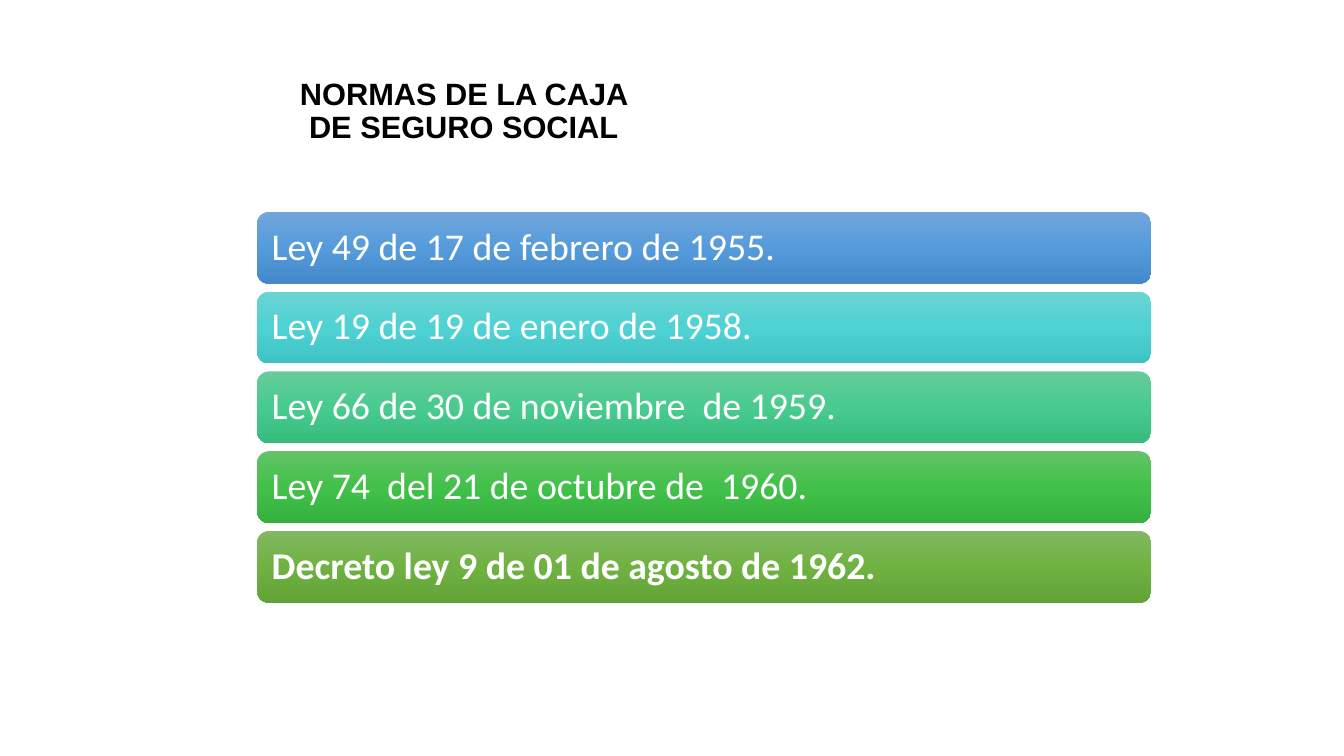
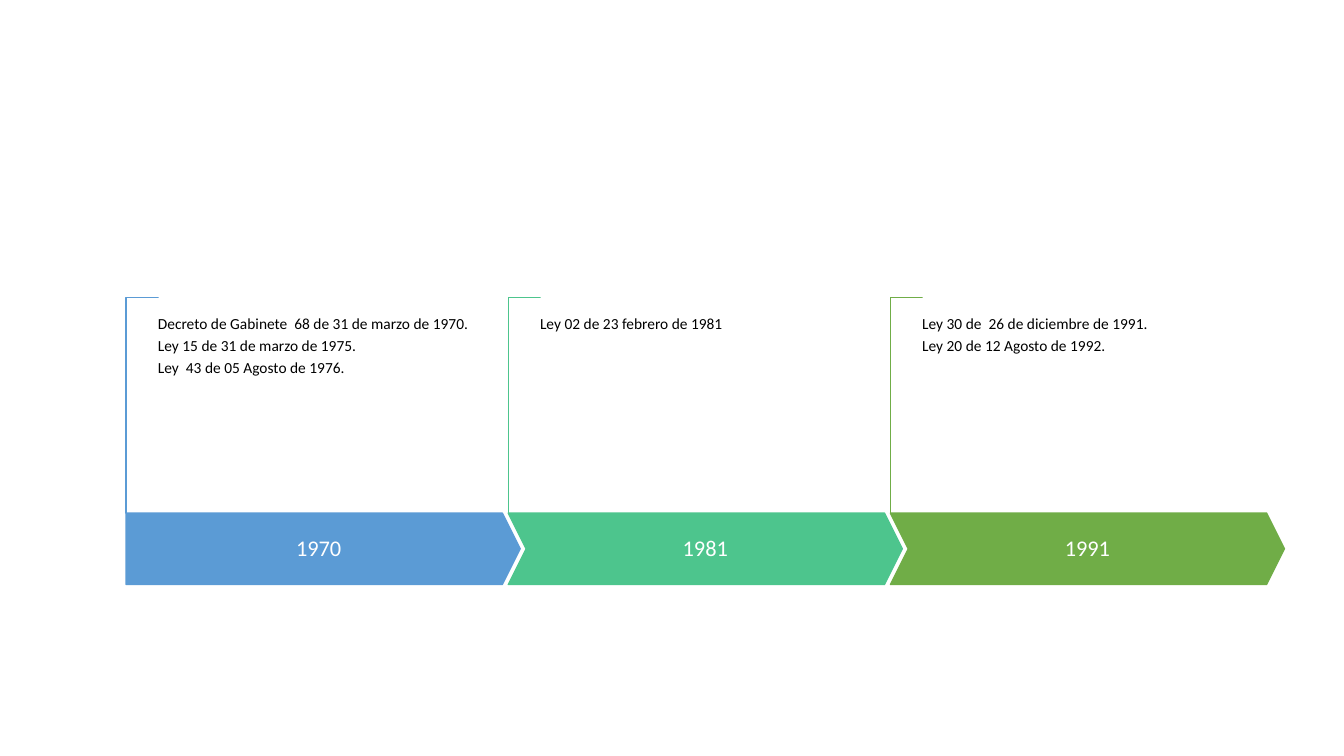
import copy

import pptx
import pptx.dml.color
import pptx.enum.shapes
import pptx.enum.text
import pptx.oxml.ns
import pptx.util

Cm = pptx.util.Cm
Shapes = pptx.enum.shapes.MSO_SHAPE
Align = pptx.enum.text.PP_ALIGN
Anchor = pptx.enum.text.MSO_ANCHOR

COLORS = {
    "black": "000000",
    "white": "FFFFFF",
    "blue": "5B9BD5",
    "mint": "4DC58D",
    "green": "70AD47",
    "blue bar": ("71A6DB", "559BDB", "448ACA"),
    "turquoise bar": ("6CD3D3", "4ED2D3", "3EC2C3"),
    "mint bar": ("67CC9A", "47CB8E", "39BB7F"),
    "bright green bar": ("63C368", "42C14A", "34B23D"),
    "olive bar": ("81B861", "6FB242", "62A336"),
}


def rgb(value):
    return pptx.dml.color.RGBColor.from_string(value)


def write_text(shape, text, size, color="white", font="Calibri", bold=False,
               align=Align.LEFT, anchor=Anchor.MIDDLE, inset=(0.28, 0.28)):
    """Fill a shape with text, one paragraph per line; insets in cm."""
    frame = shape.text_frame
    frame.word_wrap = True
    frame.vertical_anchor = anchor
    frame.margin_left = frame.margin_right = Cm(inset[0])
    frame.margin_top = frame.margin_bottom = Cm(inset[1])
    frame.text = text
    for paragraph in frame.paragraphs:
        paragraph.alignment = align
        paragraph.line_spacing = 0.9
        paragraph.space_after = pptx.util.Pt(size * 0.35)
        paragraph.font.size = pptx.util.Pt(size)
        paragraph.font.name = font
        paragraph.font.bold = bold
        paragraph.font.color.rgb = rgb(COLORS[color])


presentation = pptx.Presentation()
presentation.slide_width = Cm(33.87)
presentation.slide_height = Cm(19.05)
blank_layout = presentation.slide_layouts[6]

# Slide 1: title
slide = presentation.slides.add_slide(blank_layout)
title = slide.shapes.add_textbox(Cm(7.09), Cm(1.04), Cm(9.19), Cm(3.58))
write_text(title, "NORMAS DE LA CAJA DE SEGURO SOCIAL", 22, color="black",
           font="Arial", bold=True, align=Align.CENTER, inset=(0.25, 0.13))

# Slide 1: stacked gradient bars
laws = [
    ("Ley 49 de 17 de febrero de 1955.", "blue bar", False),
    ("Ley 19 de 19 de enero de 1958.", "turquoise bar", False),
    ("Ley 66 de 30 de noviembre  de 1959.", "mint bar", False),
    ("Ley 74  del 21 de octubre de  1960.", "bright green bar", False),
    ("Decreto ley 9 de 01 de agosto de 1962.", "olive bar", True),
]
for index, (law, gradient, bold) in enumerate(laws):
    bar = slide.shapes.add_shape(Shapes.ROUNDED_RECTANGLE, Cm(6.48),
                                 Cm(5.34 + index * 2.01), Cm(22.53), Cm(1.81))
    bar.shadow.inherit = False
    bar.line.fill.background()
    bar.fill.gradient()
    bar.fill.gradient_angle = 270
    # A new gradient has two stops; add the middle one
    stop_list = bar._element.spPr.find(".//" + pptx.oxml.ns.qn("a:gsLst"))
    stop_list.insert(1, copy.deepcopy(stop_list[0]))
    for stop, position, color in zip(bar.fill.gradient_stops, (0, 0.5, 1),
                                     COLORS[gradient]):
        stop.position = position
        stop.color.rgb = rgb(color)
    write_text(bar, law, 27, bold=bold)

# Slide 2: timeline with a bracket and notes above each arrow
slide = presentation.slides.add_slide(blank_layout)
periods = [
    ("1970", "blue", Shapes.PENTAGON,
     "Decreto de Gabinete  68 de 31 de marzo de 1970.\n"
     "Ley 15 de 31 de marzo de 1975.\n"
     "Ley  43 de 05 Agosto de 1976."),
    ("1981", "mint", Shapes.CHEVRON, "Ley 02 de 23 febrero de 1981"),
    ("1991", "green", Shapes.CHEVRON,
     "Ley 30 de  26 de diciembre de 1991.\n"
     "Ley 20 de 12 Agosto de 1992."),
]
bracket_top, bracket_height, bracket_width = 7.49, 5.44, 0.8
turn_offset = (bracket_height - bracket_width) / 2
for index, (year, color, arrow_type, notes) in enumerate(periods):
    left = 3.18 + index * 9.63

    # The bracket is an L shape turned a quarter, so it is placed lying down
    bracket = slide.shapes.add_shape(
        Shapes.CORNER, Cm(left - turn_offset), Cm(bracket_top + turn_offset),
        Cm(bracket_height), Cm(bracket_width))
    bracket.rotation = 90
    bracket.adjustments[0] = bracket.adjustments[1] = 0.01

    arrow = slide.shapes.add_shape(
        arrow_type, Cm(left), Cm(bracket_top + bracket_height), Cm(9.93), Cm(1.8))
    arrow.adjustments[0] = 0.25
    write_text(arrow, year, 16, align=Align.CENTER, inset=(0.28, 0.56))

    for shape, fill in ((bracket, "white"), (arrow, color)):
        shape.shadow.inherit = False
        shape.fill.solid()
        shape.fill.fore_color.rgb = rgb(COLORS[fill])
        shape.line.color.rgb = rgb(COLORS[color])
        shape.line.width = pptx.util.Pt(1)

    notes_box = slide.shapes.add_textbox(Cm(left + bracket_width), Cm(7.98),
                                         Cm(8.05), Cm(3.56))
    write_text(notes_box, notes, 11, color="black", anchor=Anchor.TOP, inset=(0, 0))

presentation.save("out.pptx")
